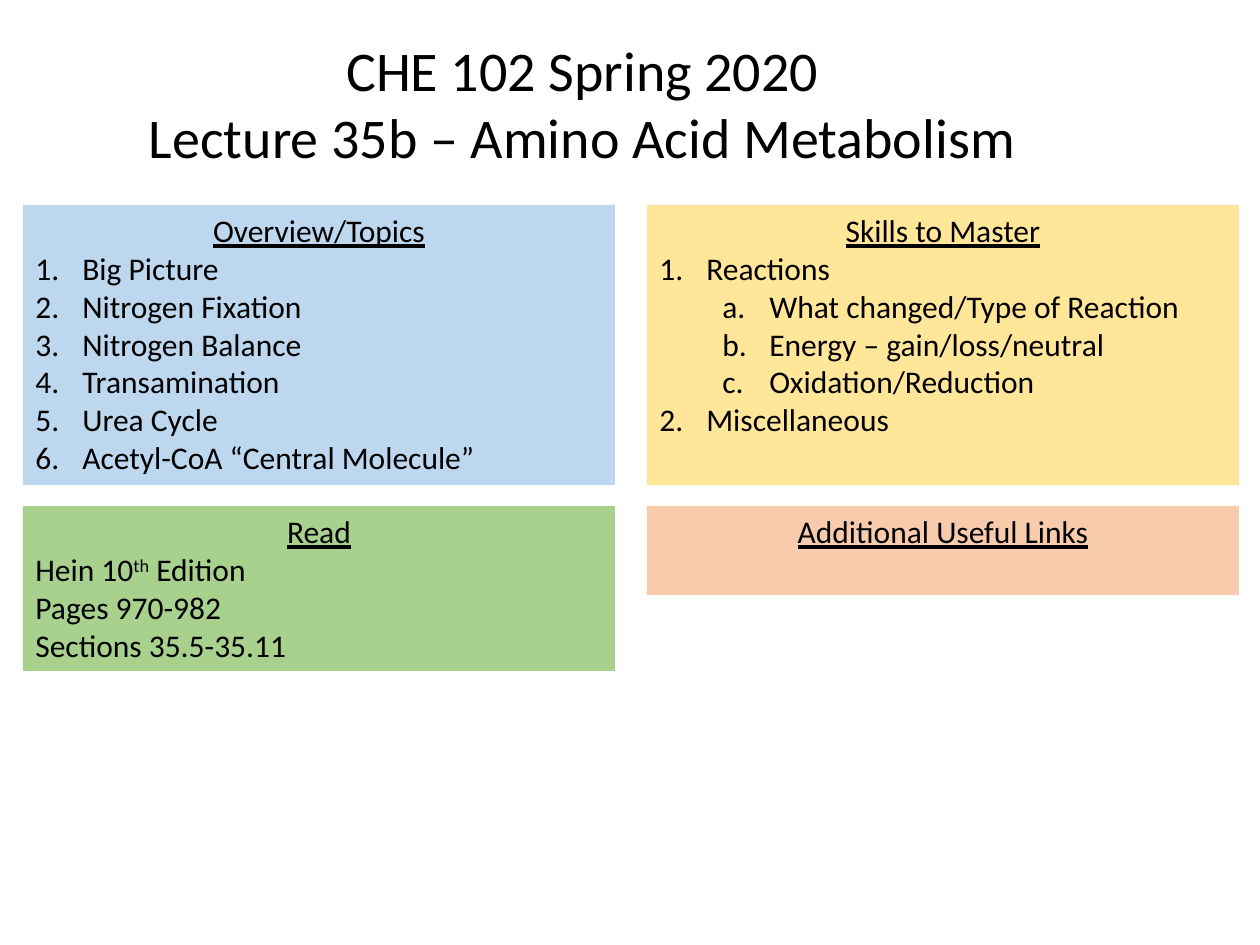
from dataclasses import dataclass

from lxml.etree import SubElement
from pptx import Presentation
from pptx.dml.color import RGBColor
from pptx.enum.shapes import MSO_SHAPE
from pptx.enum.text import MSO_ANCHOR, MSO_AUTO_SIZE, PP_ALIGN
from pptx.oxml.ns import qn
from pptx.util import Emu, Pt

PX_PER_INCH = 126
FONT = "Calibri"
BLACK = RGBColor(0x00, 0x00, 0x00)
BLUE = RGBColor(0xBD, 0xD7, 0xEE)
YELLOW = RGBColor(0xFF, 0xE6, 0x99)
GREEN = RGBColor(0xA9, 0xD1, 0x8E)
ORANGE = RGBColor(0xF8, 0xCB, 0xAD)

# Two columns and two rows of panels, in px
LEFT_COLUMN, RIGHT_COLUMN = 23, 647
TOP_ROW, BOTTOM_ROW = 205, 506
PANEL_WIDTH = 592
NUMBER_INDENT, LEVEL_INDENT = 47, 63
NUMBER_STYLES = ("arabicPeriod", "alphaLcPeriod")


@dataclass(frozen=True)
class Line:
    text: str
    level: int = 0
    numbered: bool = True
    superscript: str = ""
    ending: str = ""


@dataclass(frozen=True)
class Panel:
    heading: str
    left: int
    top: int
    height: int
    color: RGBColor
    lines: tuple[Line, ...] = ()


TITLE_LINES = ("CHE 102 Spring 2020", "Lecture 35b – Amino Acid Metabolism")

PANELS = (
    Panel("Overview/Topics", LEFT_COLUMN, TOP_ROW, 280, BLUE, (
        Line("Big Picture"),
        Line("Nitrogen Fixation"),
        Line("Nitrogen Balance"),
        Line("Transamination"),
        Line("Urea Cycle"),
        Line("Acetyl-CoA “Central Molecule”"),
    )),
    Panel("Skills to Master", RIGHT_COLUMN, TOP_ROW, 280, YELLOW, (
        Line("Reactions"),
        Line("What changed/Type of Reaction", level=1),
        Line("Energy – gain/loss/neutral", level=1),
        Line("Oxidation/Reduction", level=1),
        Line("Miscellaneous"),
    )),
    Panel("Read", LEFT_COLUMN, BOTTOM_ROW, 165, GREEN, (
        Line("Hein 10", numbered=False, superscript="th", ending=" Edition"),
        Line("Pages 970-982", numbered=False),
        Line("Sections 35.5-35.11", numbered=False),
    )),
    Panel("Additional Useful Links", RIGHT_COLUMN, BOTTOM_ROW, 89, ORANGE),
)


def px(length: int) -> Emu:
    return Emu(round(length * 914400 / PX_PER_INCH))


def add_run(paragraph, text: str, size: int = 18, underline: bool = False,
            superscript: bool = False) -> None:
    run = paragraph.add_run()
    run.text = text
    run.font.name = FONT
    run.font.size = Pt(size)
    run.font.color.rgb = BLACK
    if underline:
        run.font.underline = True
    if superscript:
        run.font._element.set("baseline", "30000")


def number_paragraph(paragraph, level: int) -> None:
    paragraph.level = level
    properties = paragraph._p.get_or_add_pPr()
    properties.set("marL", str(px(NUMBER_INDENT + level * LEVEL_INDENT)))
    properties.set("indent", str(px(-NUMBER_INDENT)))
    SubElement(properties, qn("a:buFont"), typeface="+mj-lt")
    SubElement(properties, qn("a:buAutoNum"), type=NUMBER_STYLES[level])


def add_title(slide) -> None:
    text_box = slide.shapes.add_textbox(px(132), px(29), px(901), px(149))
    frame = text_box.text_frame
    frame.word_wrap = False
    for index, text in enumerate(TITLE_LINES):
        paragraph = frame.add_paragraph() if index else frame.paragraphs[0]
        paragraph.alignment = PP_ALIGN.CENTER
        add_run(paragraph, text, size=32)


def add_panel(slide, panel: Panel) -> None:
    shape = slide.shapes.add_shape(
        MSO_SHAPE.RECTANGLE, px(panel.left), px(panel.top),
        px(PANEL_WIDTH), px(panel.height))
    shape.shadow.inherit = False
    shape.fill.solid()
    shape.fill.fore_color.rgb = panel.color
    shape.line.fill.background()

    frame = shape.text_frame
    frame.word_wrap = True
    frame.auto_size = MSO_AUTO_SIZE.NONE
    frame.vertical_anchor = MSO_ANCHOR.TOP
    heading = frame.paragraphs[0]
    heading.alignment = PP_ALIGN.CENTER
    add_run(heading, panel.heading, underline=True)

    for line in panel.lines:
        paragraph = frame.add_paragraph()
        paragraph.alignment = PP_ALIGN.LEFT
        if line.numbered:
            number_paragraph(paragraph, line.level)
        add_run(paragraph, line.text)
        if line.superscript:
            add_run(paragraph, line.superscript, superscript=True)
            add_run(paragraph, line.ending)


def main() -> None:
    presentation = Presentation()
    presentation.slide_width = px(1260)
    presentation.slide_height = px(945)
    slide = presentation.slides.add_slide(presentation.slide_layouts[6])

    # Title above the panels
    add_title(slide)

    # Coloured panels
    for panel in PANELS:
        add_panel(slide, panel)

    presentation.save("out.pptx")


if __name__ == "__main__":
    main()
